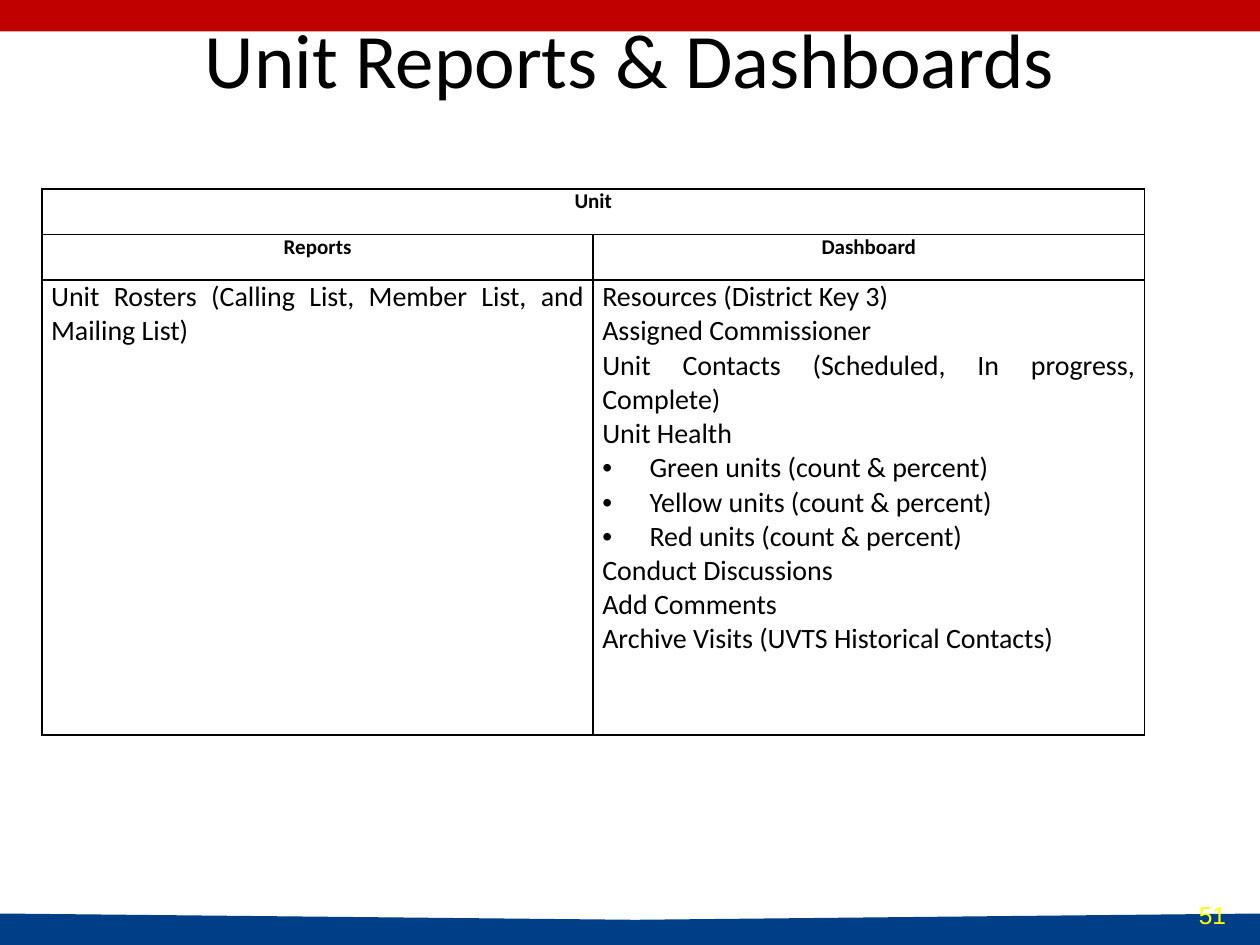
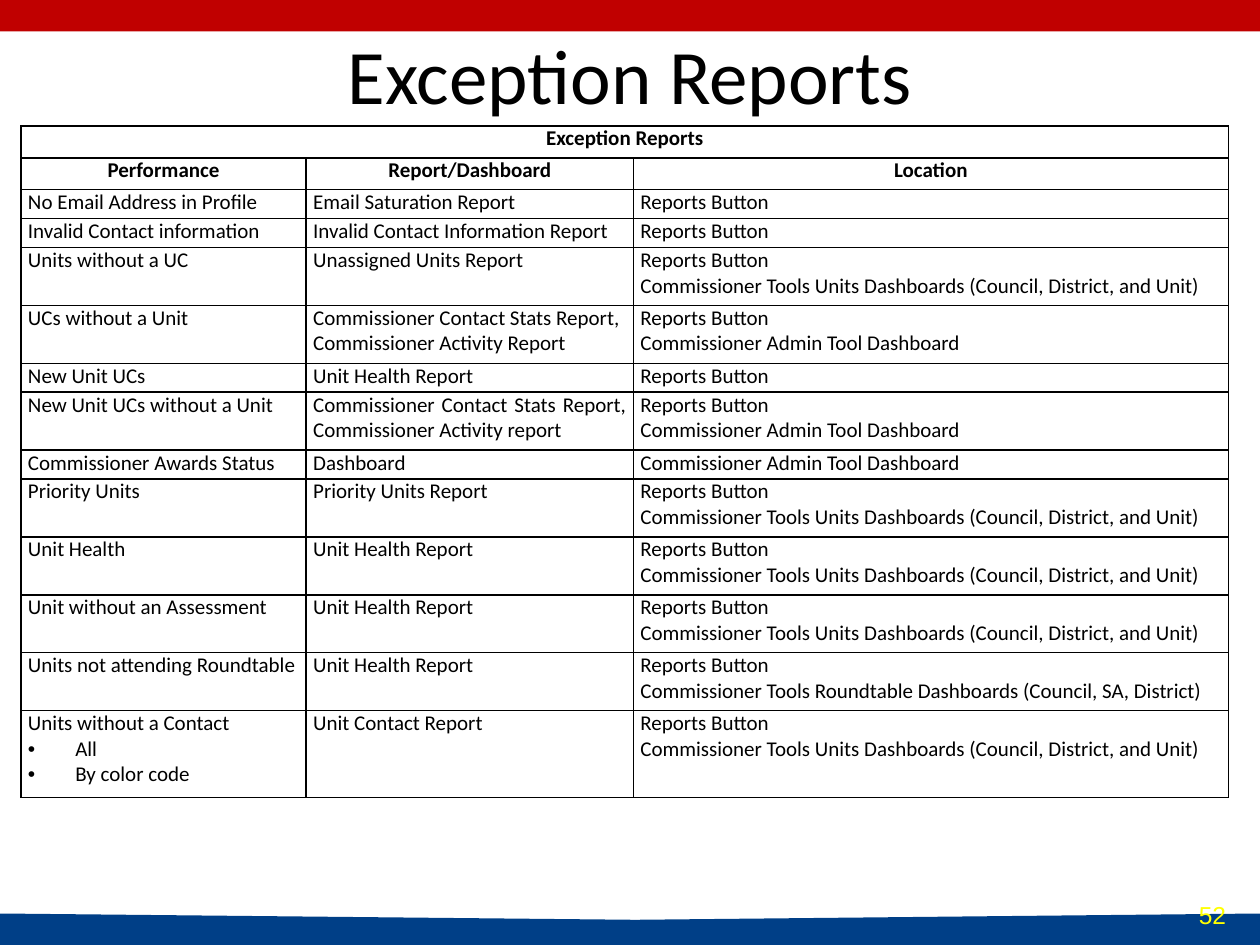
from lxml import etree
from pptx import Presentation
from pptx.dml.color import RGBColor
from pptx.enum.shapes import MSO_SHAPE
from pptx.enum.text import MSO_ANCHOR, PP_ALIGN
from pptx.oxml.ns import qn
from pptx.util import Pt

RECT = MSO_SHAPE.RECTANGLE
MIDDLE = MSO_ANCHOR.MIDDLE
CENTER, JUSTIFY = PP_ALIGN.CENTER, PP_ALIGN.JUSTIFY

WIDTH, HEIGHT = 720, 540
BAND = 18
RED, BLUE, YELLOW, BLACK = "C00000", "003F87", "FFFF00", "000000"
BODY_FONT, NUMBER_FONT = "Calibri", "Arial"
TITLE_ONLY = 5
HEADER_ROWS = 2
HEADER_SIZE = 12
BULLET = "• "
BULLET_INDENT = 27

UNIT_ROWS = [
    ["Unit", ""],
    ["Reports", "Dashboard"],
    ["Unit Rosters (Calling List, Member List, and Mailing List)",
     "Resources (District Key 3)\n"
     "Assigned Commissioner\n"
     "Unit Contacts (Scheduled, In progress, Complete)\n"
     "Unit Health\n"
     "• Green units (count & percent)\n"
     "• Yellow units (count & percent)\n"
     "• Red units (count & percent)\n"
     "Conduct Discussions\n"
     "Add Comments\n"
     "Archive Visits (UVTS Historical Contacts)"],
]

BUTTON = "Reports Button"
ADMIN_TOOL = "Commissioner Admin Tool Dashboard"
BUTTON_ADMIN = f"{BUTTON}\n{ADMIN_TOOL}"
BUTTON_UNITS = (f"{BUTTON}\nCommissioner Tools Units Dashboards "
                "(Council, District, and Unit)")
BUTTON_ROUNDTABLE = (f"{BUTTON}\nCommissioner Tools Roundtable Dashboards "
                     "(Council, SA, District)")
HEALTH = "Unit Health Report"

EXCEPTION_ROWS = [
    ["Exception Reports", "", ""],
    ["Performance", "Report/Dashboard", "Location"],
    ["No Email Address in Profile", "Email Saturation Report", BUTTON],
    ["Invalid Contact information", "Invalid Contact Information Report", BUTTON],
    ["Units without a UC", "Unassigned Units Report", BUTTON_UNITS],
    ["UCs without a Unit",
     "Commissioner Contact Stats Report,\nCommissioner Activity Report",
     BUTTON_ADMIN],
    ["New Unit UCs", HEALTH, BUTTON],
    ["New Unit UCs without a Unit",
     "Commissioner Contact Stats Report, Commissioner Activity report",
     BUTTON_ADMIN],
    ["Commissioner Awards Status", "Dashboard", ADMIN_TOOL],
    ["Priority Units", "Priority Units Report", BUTTON_UNITS],
    ["Unit Health", HEALTH, BUTTON_UNITS],
    ["Unit without an Assessment", HEALTH, BUTTON_UNITS],
    ["Units not attending Roundtable", HEALTH, BUTTON_ROUNDTABLE],
    ["Units without a Contact\n• All\n• By color code",
     "Unit Contact Report", BUTTON_UNITS],
]


def rgb(color):
    return RGBColor.from_string(color)


def format_runs(p, size, color=BLACK, font=BODY_FONT, bold=False):
    for r in p.runs:
        r.font.name = font
        r.font.size = Pt(size)
        r.font.bold = bold
        r.font.color.rgb = rgb(color)


def paint(sp, color):
    sp.shadow.inherit = False
    sp.fill.solid()
    sp.fill.fore_color.rgb = rgb(color)
    sp.line.fill.background()


def add_bands(s):
    paint(s.shapes.add_shape(RECT, 0, 0, Pt(WIDTH), Pt(BAND)), RED)
    top = HEIGHT - BAND
    outline = s.shapes.build_freeform(0, Pt(top))
    corners = [(363, top + 3.6), (WIDTH, top), (WIDTH, HEIGHT), (0, HEIGHT)]
    outline.add_line_segments([(Pt(x), Pt(y)) for x, y in corners])
    paint(outline.convert_to_shape(), BLUE)


def add_number(s, number):
    box = s.shapes.add_textbox(Pt(678), Pt(510.5), Pt(42), Pt(29))
    tf = box.text_frame
    tf.word_wrap = True
    tf.text = str(number)
    format_runs(tf.paragraphs[0], 14, YELLOW, NUMBER_FONT)


def add_title(s, text, top, height):
    title = s.shapes.title
    title.left, title.top = Pt(36), Pt(top)
    title.width, title.height = Pt(WIDTH - 72), Pt(height)
    tf = title.text_frame
    tf.text = text
    tf.vertical_anchor = MIDDLE
    p = tf.paragraphs[0]
    p.alignment = CENTER
    format_runs(p, 44)


def add_slide(prs, title, top, height, number):
    s = prs.slides.add_slide(prs.slide_layouts[TITLE_ONLY])
    add_bands(s)
    add_title(s, title, top, height)
    add_number(s, number)
    return s


def add_bullet(p):
    pPr = p._p.get_or_add_pPr()
    pPr.set("marL", str(Pt(BULLET_INDENT)))
    pPr.set("indent", str(-Pt(BULLET_INDENT)))
    etree.SubElement(pPr, qn("a:buFont")).set("typeface", NUMBER_FONT)
    etree.SubElement(pPr, qn("a:buChar")).set("char", BULLET.strip())


def add_borders(cell):
    tcPr = cell._tc.get_or_add_tcPr()
    for side in ("a:lnL", "a:lnR", "a:lnT", "a:lnB"):
        ln = etree.SubElement(tcPr, qn(side), w=str(Pt(1)))
        fill = etree.SubElement(ln, qn("a:solidFill"))
        etree.SubElement(fill, qn("a:srgbClr"), val=BLACK)


def fill_cell(cell, text, size, inset, header):
    add_borders(cell)
    cell.fill.background()
    cell.margin_left = cell.margin_right = Pt(inset)
    cell.margin_top = cell.margin_bottom = 0
    cell.text_frame.text = text
    for p in cell.text_frame.paragraphs:
        p.alignment = CENTER if header else JUSTIFY
        if p.text.startswith(BULLET):
            p.text = p.text.removeprefix(BULLET)
            add_bullet(p)
        format_runs(p, size, bold=header)


def add_grid(s, rows, left, top, widths, heights, size, inset):
    """Add a bordered table whose first row is one merged heading."""
    frame = s.shapes.add_table(len(rows), len(widths), Pt(left), Pt(top),
                               Pt(sum(widths)), Pt(sum(heights)))
    table = frame.table
    table.first_row = table.horz_banding = False
    for column, width in zip(table.columns, widths):
        column.width = Pt(width)
    for row, height in zip(table.rows, heights):
        row.height = Pt(height)
    for i, texts in enumerate(rows):
        header = i < HEADER_ROWS
        for cell, text in zip(table.rows[i].cells, texts):
            fill_cell(cell, text, HEADER_SIZE if header else size, inset, header)
    table.cell(0, 0).merge(table.cell(0, len(widths) - 1))


def main():
    prs = Presentation()
    prs.slide_width, prs.slide_height = Pt(WIDTH), Pt(HEIGHT)

    s = add_slide(prs, "Unit Reports & Dashboards", 0, 66, 51)
    add_grid(s, UNIT_ROWS, 24, 108, [315, 315], [26, 26, 260], 16, 5.2)

    s = add_slide(prs, "Exception Reports", 12, 60, 52)
    line_counts = [1, 1, 2, 2, 1, 2, 1, 2, 2, 2, 2, 3]
    heights = [18.2] * HEADER_ROWS + [16.55 * n for n in line_counts]
    add_grid(s, EXCEPTION_ROWS, 12, 72, [163, 187, 340], heights, 12, 4)

    prs.save("out.pptx")


if __name__ == "__main__":
    main()
